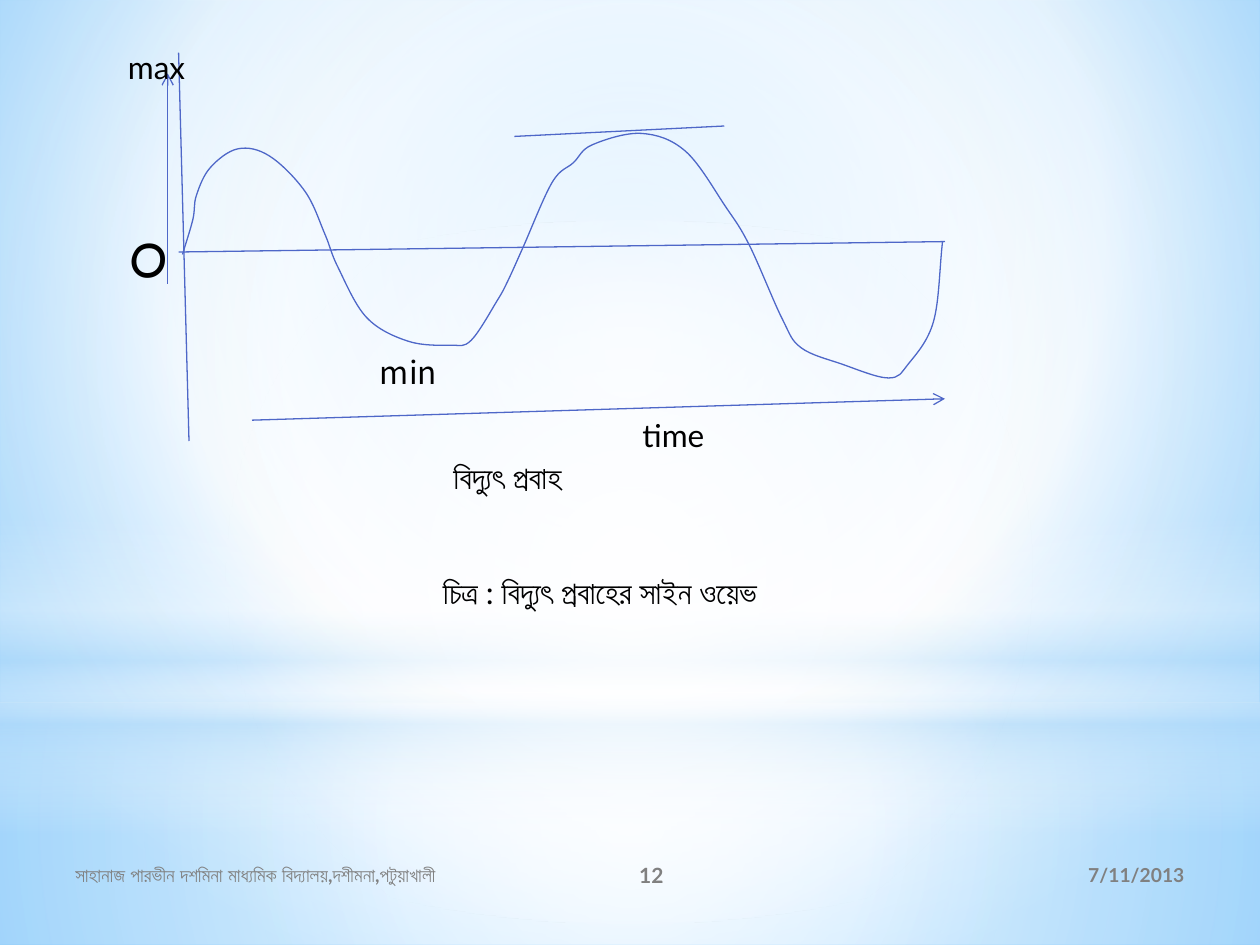
from lxml import etree
from pptx import Presentation
from pptx.dml.color import RGBColor
from pptx.enum.shapes import MSO_CONNECTOR, MSO_SHAPE
from pptx.enum.text import MSO_ANCHOR, PP_ALIGN
from pptx.oxml.ns import qn
from pptx.util import Cm, Pt

RECTANGLE, ELLIPSE = MSO_SHAPE.RECTANGLE, MSO_SHAPE.OVAL
STRAIGHT = MSO_CONNECTOR.STRAIGHT
TOP, MIDDLE, BOTTOM = MSO_ANCHOR.TOP, MSO_ANCHOR.MIDDLE, MSO_ANCHOR.BOTTOM
LEFT, CENTER, RIGHT = PP_ALIGN.LEFT, PP_ALIGN.CENTER, PP_ALIGN.RIGHT

COLORS = {
    "sky": "9ED5FF",
    "deep_sky": "5BB9FF",
    "pale_blue": "B4DCFA",
    "white": "FFFFFF",
    "line": "4E67C8",
    "text": "000000",
    "footer": "808080",
}
FONT = "Lato"
CENTERED = (50, 50, 50, 50)

# Bengali letter yya: base letter with nukta, and the single code point
YYA_PAIR, YYA = chr(0x9AF) + chr(0x9BC), chr(0x9DF)

# Points that the current curve passes through, in cm
WAVE = [
    (3.68, 5.13), (3.89, 4.42), (3.96, 3.94), (4.24, 3.38), (4.8, 3),
    (5.44, 3.15), (6.15, 3.86), (6.55, 4.72), (6.81, 5.38), (7.39, 6.4),
    (8.23, 6.88), (9.09, 6.96), (9.5, 6.86), (10.03, 6.05), (10.24, 5.66),
    (10.54, 5), (11.13, 3.68), (11.56, 3.28), (11.94, 2.92), (12.93, 2.69),
    (13.82, 3.05), (14.63, 4.17), (15.11, 4.95), (15.77, 6.43), (16.15, 7.01),
    (16.97, 7.34), (17.91, 7.62), (18.31, 7.34), (18.82, 6.48), (19, 4.88),
]


def set_gradient(properties, stops, focus=None, angle=90):
    """Swap a solid fill for a gradient of (position, color, opacity) stops."""
    gradient = etree.Element(qn("a:gradFill"), rotWithShape="1")
    stop_list = etree.SubElement(gradient, qn("a:gsLst"))
    for position, color, opacity in stops:
        stop = etree.SubElement(stop_list, qn("a:gs"), pos=str(position * 1000))
        value = etree.SubElement(stop, qn("a:srgbClr"), val=COLORS[color])
        if opacity < 100:
            etree.SubElement(value, qn("a:alpha"), val=str(opacity * 1000))
    if focus:
        path = etree.SubElement(gradient, qn("a:path"), path="circle")
        sides = {side: str(share * 1000) for side, share in zip("ltrb", focus)}
        etree.SubElement(path, qn("a:fillToRect"), **sides)
    else:
        etree.SubElement(gradient, qn("a:lin"), ang=str(angle * 60000), scaled="0")
    properties.replace(properties.find(qn("a:solidFill")), gradient)


def set_background(slide):
    slide.background.fill.solid()
    properties = slide.element.find(".//" + qn("p:bgPr"))
    stops = [(0, "sky", 100), (60, "white", 100), (100, "deep_sky", 100)]
    set_gradient(properties, stops, (20, 10, 20, 60))


def add_glow(slide, kind, top, height, stops, focus=None):
    shape = slide.shapes.add_shape(kind, 0, Cm(top), Cm(25.4), Cm(height))
    shape.shadow.inherit = False
    shape.line.fill.background()
    shape.fill.solid()
    set_gradient(shape.element.spPr, stops, focus)


def add_text(slide, text, left, top, width, height, size=18, font=FONT,
             color="text", bold=False, align=LEFT, anchor=TOP):
    box = slide.shapes.add_textbox(Cm(left), Cm(top), Cm(width), Cm(height))
    frame = box.text_frame
    frame.word_wrap = True
    frame.vertical_anchor = anchor
    frame.text = text.replace(YYA_PAIR, YYA)
    paragraph = frame.paragraphs[0]
    paragraph.alignment = align
    run_font = paragraph.runs[0].font
    run_font.name, run_font.size, run_font.bold = font, Pt(size), bold
    run_font.color.rgb = RGBColor.from_string(COLORS[color])


def style_line(line):
    line.color.rgb = RGBColor.from_string(COLORS["line"])
    line.width = Pt(0.75)


def add_line(slide, start, end, arrow=False):
    connector = slide.shapes.add_connector(
        STRAIGHT, *(Cm(value) for value in (*start, *end)))
    style_line(connector.line)
    properties = connector.element.spPr
    if arrow:
        etree.SubElement(properties.find(qn("a:ln")), qn("a:tailEnd"), type="arrow")
    etree.SubElement(properties, qn("a:effectLst"))


def smooth_path(path):
    """Turn the straight segments of a path into Catmull-Rom curves."""
    knots = [(int(point.get("x")), int(point.get("y")))
             for point in path.iter(qn("a:pt"))]

    def mirror(end, inner):
        return tuple(2 * a - b for a, b in zip(end, inner))

    padded = [mirror(knots[0], knots[1]), *knots, mirror(knots[-1], knots[-2])]
    quads = zip(padded, padded[1:], padded[2:], padded[3:])
    for segment, (before, start, end, after) in zip(path.findall(qn("a:lnTo")), quads):
        leaving = [b + (c - a) / 6 for a, b, c in zip(before, start, end)]
        arriving = [c - (d - b) / 6 for b, c, d in zip(start, end, after)]
        curve = etree.Element(qn("a:cubicBezTo"))
        for x, y in (leaving, arriving, end):
            etree.SubElement(curve, qn("a:pt"), x=str(round(x)), y=str(round(y)))
        path.replace(segment, curve)


def add_wave(slide):
    points = [(Cm(x), Cm(y)) for x, y in WAVE]
    builder = slide.shapes.build_freeform(*points[0])
    builder.add_line_segments(points[1:], close=False)
    shape = builder.convert_to_shape()
    shape.shadow.inherit = False
    shape.fill.background()
    style_line(shape.line)
    smooth_path(shape.element.find(".//" + qn("a:path")))


def add_backdrop(slide):
    set_background(slide)
    add_glow(slide, RECTANGLE, 14.17, 4.88,
             [(0, "white", 91), (37, "white", 76), (100, "pale_blue", 79)], CENTERED)
    add_glow(slide, RECTANGLE, 0, 14.17,
             [(0, "white", 89), (48, "white", 62), (100, "pale_blue", 79)], CENTERED)
    add_glow(slide, RECTANGLE, 10.46, 6.35,
             [(0, "white", 0), (29, "white", 30), (45, "pale_blue", 40),
              (55, "white", 26), (65, "pale_blue", 60), (100, "white", 0)])
    add_glow(slide, ELLIPSE, 4.45, 14.17,
             [(0, "white", 100), (56, "white", 0)], CENTERED)


def add_footer(slide):
    items = [
        ("7/11/2013", 17.15, 6.98, 11, RIGHT),
        ("সাহানাজ পারভীন দশমিনা মাধ্যমিক বিদ্যালয়,দশীমনা,পটুয়াখালী",
         1.27, 9.32, 11, LEFT),
        ("12", 10.59, 5.08, 12, CENTER),
    ]
    for text, left, width, size, align in items:
        add_text(slide, text, left, 17.14, width, 1.01, size, color="footer",
                 bold=True, align=align, anchor=MIDDLE)


def add_diagram(slide):
    add_line(slide, (3.6, 1.06), (3.81, 8.89))
    add_line(slide, (19.05, 4.87), (3.6, 5.08))
    add_wave(slide)
    add_text(slide, "০", 2.33, 2.96, 1.48, 3.29, size=54, anchor=BOTTOM)
    add_line(slide, (3.38, 5.72), (3.38, 1.48), arrow=True)
    add_text(slide, "max", 2.33, 0.85, 1.9, 1.02)
    add_line(slide, (5.08, 8.47), (19.05, 8.04), arrow=True)
    add_text(slide, "বিদ্যুৎ প্রবাহ", 8.89, 9.1, 7.83, 1.02)
    add_line(slide, (10.37, 2.75), (14.6, 2.54))
    add_text(slide, "min", 7.41, 6.99, 4.45, 1.02, font="Noto Sans CJK TC")
    add_text(slide, "time", 12.7, 8.26, 2.97, 1.02)
    add_text(slide, "চিত্র : বিদ্যুৎ প্রবাহের সাইন ওয়েভ", 8.68, 11.43, 9.74, 1.06)


def main():
    presentation = Presentation()
    presentation.slide_width, presentation.slide_height = Cm(25.4), Cm(19.05)
    slide = presentation.slides.add_slide(presentation.slide_layouts[6])
    add_backdrop(slide)
    add_footer(slide)
    add_diagram(slide)
    presentation.save("out.pptx")


if __name__ == "__main__":
    main()
